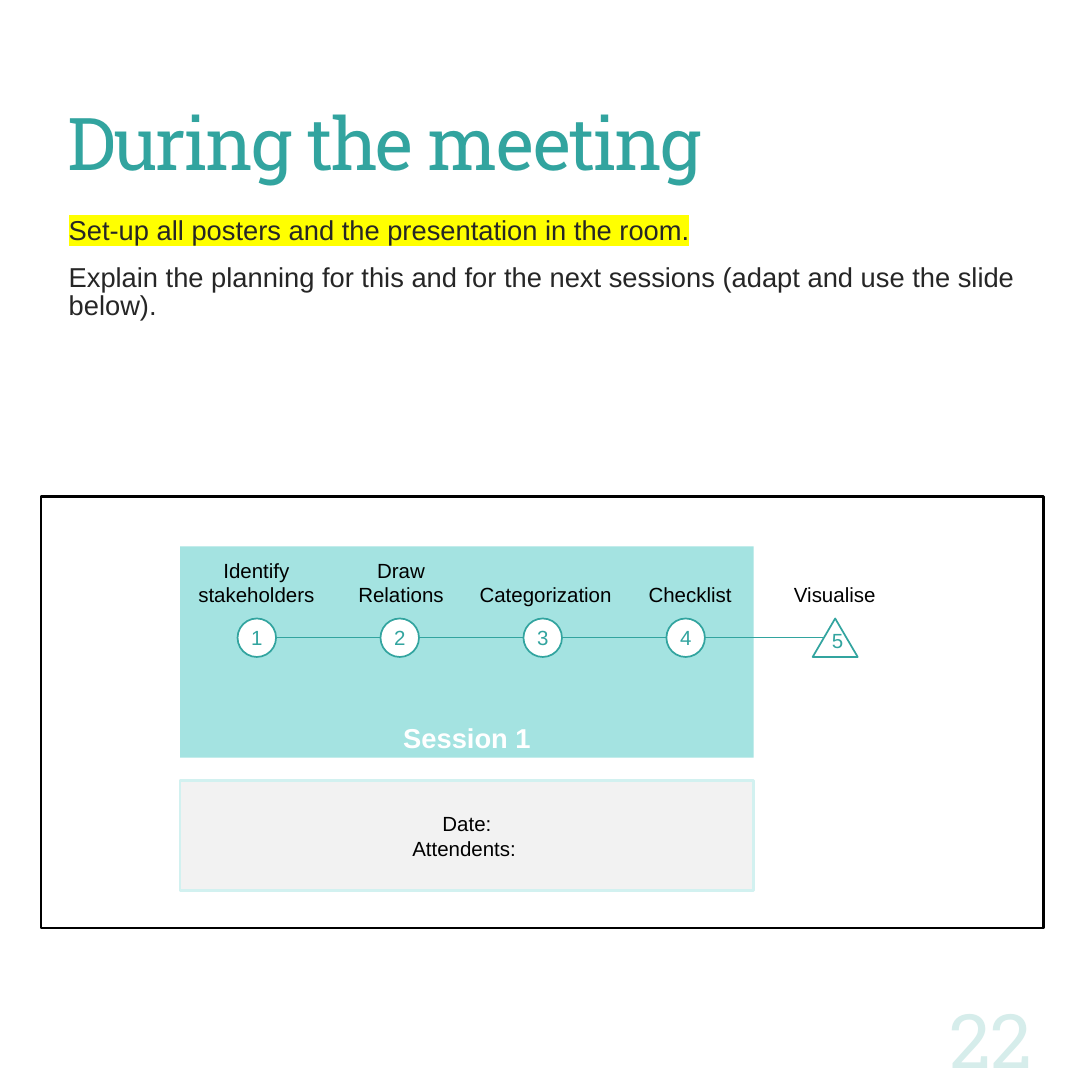
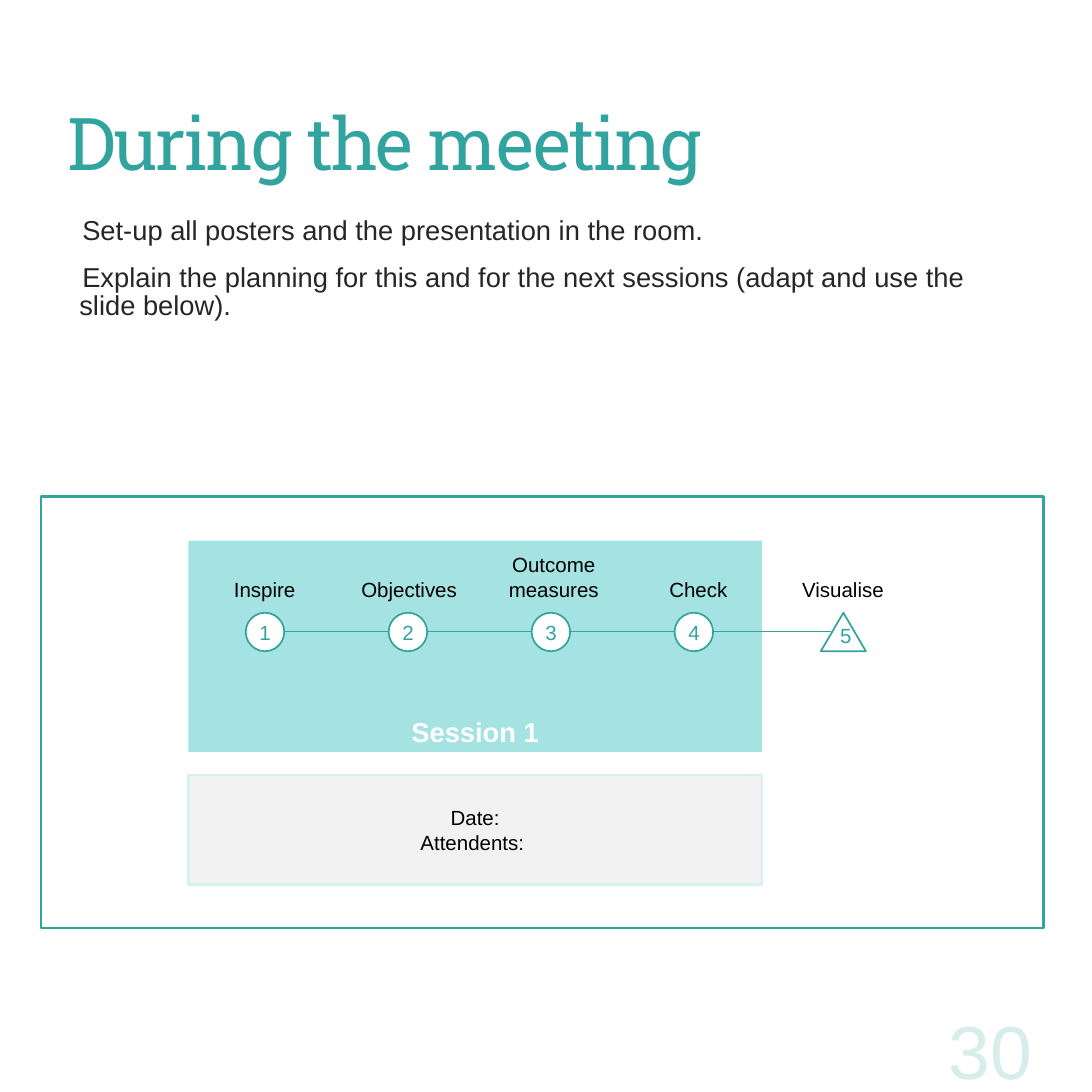
import pptx
import pptx.dml.color
import pptx.enum.shapes
import pptx.enum.text
import pptx.oxml.ns
import pptx.util
from lxml import etree

Inches = pptx.util.Inches
Pt = pptx.util.Pt
SHAPES = pptx.enum.shapes.MSO_SHAPE
ANCHOR = pptx.enum.text.MSO_ANCHOR
ALIGN = pptx.enum.text.PP_ALIGN
qn = pptx.oxml.ns.qn

TEAL = "32A49F"
AQUA = "A4E3E1"
PALE_AQUA = "D2F1F0"
PAGE_TINT = "D6EDEB"
GREY = "F2F2F2"
INK = "262626"
BLACK = "000000"
WHITE = "FFFFFF"
YELLOW = "FFFF00"
SERIF = "Roboto Slab"
SANS = "Arial"

STEP_SIZE = 0.47
STEP_PITCH = 1.745
LABEL_PITCH = 1.765
TITLE = "During the meeting"
INSTRUCTIONS = [
    "Set-up all posters and the presentation in the room.",
    "Explain the planning for this and for the next sessions (adapt and use the slide below).",
]


def rgb(value):
    return pptx.dml.color.RGBColor.from_string(value)


def write(shape, lines, size, color, font=SANS, bold=False,
          align=ALIGN.CENTER, anchor=ANCHOR.MIDDLE):
    frame = shape.text_frame
    frame.word_wrap = True
    frame.vertical_anchor = anchor
    frame.text = "\n".join(lines)
    for paragraph in frame.paragraphs:
        paragraph.alignment = align
        paragraph.font.name = font
        paragraph.font.size = Pt(size)
        paragraph.font.bold = bold
        paragraph.font.color.rgb = rgb(color)
    return frame.paragraphs


def add_text(slide, box, lines, size, color, **style):
    textbox = slide.shapes.add_textbox(*map(Inches, box))
    return write(textbox, lines, size, color, **style)


def add_block(slide, kind, box, fill=None, line=None, width=1.5):
    block = slide.shapes.add_shape(kind, *map(Inches, box))
    block.shadow.inherit = False
    if fill:
        block.fill.solid()
        block.fill.fore_color.rgb = rgb(fill)
    else:
        block.fill.background()
    if line:
        block.line.color.rgb = rgb(line)
        block.line.width = Pt(width)
    else:
        block.line.fill.background()
    return block


def add_timeline(slide, start, end, y, width):
    timeline = slide.shapes.add_connector(
        pptx.enum.shapes.MSO_CONNECTOR.STRAIGHT,
        Inches(start), Inches(y), Inches(end), Inches(y))
    timeline.line.color.rgb = rgb(TEAL)
    timeline.line.width = Pt(width)
    etree.SubElement(timeline._element.spPr, qn("a:effectLst"))


def add_title(slide):
    heading = add_text(slide, (0.72, 0.97, 11.78, 1.64), [TITLE], 64, TEAL,
                       font=SERIF, align=ALIGN.LEFT)[0]
    heading.line_spacing = 0.9
    heading.runs[0]._r.get_or_add_rPr().set("spc", "-160")


def highlight(run):
    marker = etree.SubElement(run._r.get_or_add_rPr(), qn("a:highlight"))
    etree.SubElement(marker, qn("a:srgbClr")).set("val", YELLOW)


def hang_blank_bullet(paragraph):
    properties = paragraph._p.get_or_add_pPr()
    properties.set("marL", str(Inches(0.13)))
    properties.set("indent", str(Inches(-0.13)))
    bullet = etree.Element(qn("a:buChar"))
    bullet.set("char", " ")
    properties.find(qn("a:defRPr")).addprevious(bullet)


def add_instructions(slide, highlighted):
    paragraphs = add_text(slide, (0.74, 2.61, 11.76, 9.58), INSTRUCTIONS, 24, INK,
                          align=ALIGN.LEFT, anchor=ANCHOR.TOP)
    for paragraph in paragraphs:
        paragraph.line_spacing = 0.85
        paragraph.space_before = Pt(17.3)
        if not highlighted:
            hang_blank_bullet(paragraph)
    if highlighted:
        highlight(paragraphs[0].runs[0])


def add_session(slide, left, top, steps, line_width):
    session = add_block(slide, SHAPES.RECTANGLE, (left, top, 7, 2.58), AQUA)
    write(session, ["Session 1"], 24, WHITE, bold=True, anchor=ANCHOR.BOTTOM)
    details = add_block(slide, SHAPES.RECTANGLE, (left, top + 2.86, 7, 1.34),
                        GREY, PALE_AQUA, 2.25)
    write(details, ["Date:", "Attendents: "], 18, BLACK)

    add_timeline(slide, left + 1.17, left + 7.85, top + 1.11, line_width)
    last = len(steps) - 1
    for index, label in enumerate(steps):
        if index < last:
            kind, anchor = SHAPES.OVAL, ANCHOR.MIDDLE
            offset, width = 0.7 + STEP_PITCH * index, STEP_SIZE
        else:
            kind, anchor = SHAPES.ISOSCELES_TRIANGLE, ANCHOR.BOTTOM
            offset, width = 7.72, 0.55
        step = add_block(slide, kind, (left + offset, top + 0.88, width, STEP_SIZE),
                         WHITE, TEAL)
        write(step, [str(index + 1)], 18, TEAL, anchor=anchor)
        add_text(slide, (left + LABEL_PITCH * index, top + 0.08, 1.86, 0.71),
                 label.split("\n"), 18, BLACK, anchor=ANCHOR.BOTTOM)


def add_page_number(slide, number, font, top):
    add_text(slide, (10.7, top, 2, 1), [number], 66, PAGE_TINT, font=font,
             align=ALIGN.RIGHT, anchor=ANCHOR.TOP)


def add_meeting_slide(deck, highlighted, frame_color, origin, steps, line_width,
                      number, number_font, number_top):
    slide = deck.slides.add_slide(deck.slide_layouts[6])
    add_title(slide)
    add_instructions(slide, highlighted)
    add_block(slide, SHAPES.RECTANGLE, (0.5, 6.06, 12.24, 5.27), None, frame_color, 2.25)
    add_session(slide, *origin, steps, line_width)
    add_page_number(slide, number, number_font, number_top)


def main():
    deck = pptx.Presentation()
    deck.slide_width = deck.slide_height = Inches(13.33)
    add_meeting_slide(
        deck, True, BLACK, (2.2, 6.67),
        ["Identify stakeholders", "Draw\nRelations", "Categorization", "Checklist", "Visualise"],
        0.75, "22", SERIF, 12.08)
    add_meeting_slide(
        deck, False, TEAL, (2.3, 6.6),
        ["Inspire", "Objectives", "Outcome\nmeasures", "Check", "Visualise"],
        1.5, "30", SANS, 12.21)
    deck.save("out.pptx")


if __name__ == "__main__":
    main()
